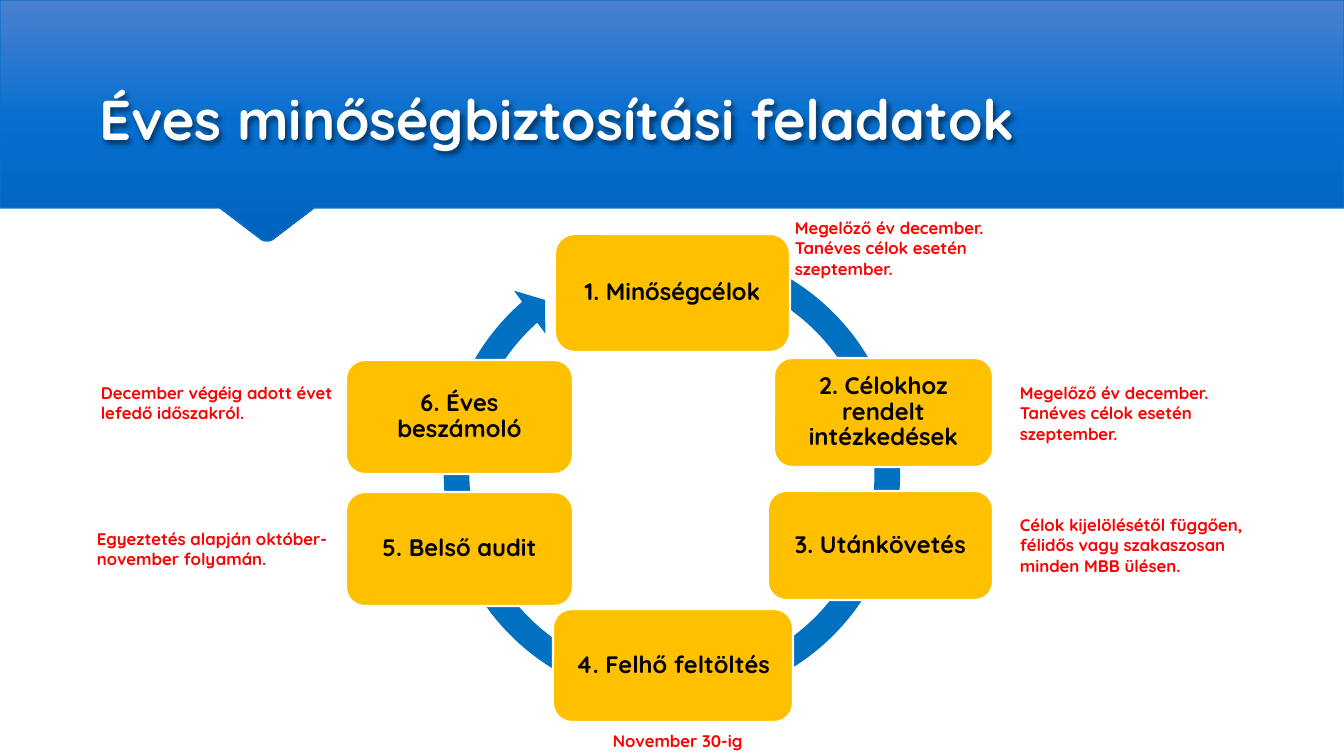
import copy
from dataclasses import dataclass

from pptx import Presentation
from pptx import util as u
from pptx.dml.color import RGBColor
from pptx.enum import shapes, text
from pptx.oxml import parse_xml
from pptx.oxml.ns import nsdecls, qn

PX = 12192000 / 1344


@dataclass(frozen=True)
class Theme:
    font: str = "Quicksand"
    title: str = "FEFEFE"
    banner: tuple = ((0, "4C80D0"), (0.5, "066FCF"), (1, "0063BD"))
    banner_edge: str = "0F6FC6"
    cycle: str = "0070C0"
    step: str = "FFC000"
    step_edge: str = "FFFFFF"
    step_text: str = "000000"
    note: str = "FF0000"
    title_size: int = 40
    step_size: int = 17
    note_size: int = 12


THEME = Theme()


def px(*lengths):
    return [u.Emu(round(length * PX)) for length in lengths]


def write(frame, words, size, color, **paragraph_format):
    """Fill a text frame with one bold paragraph."""
    frame.word_wrap = True
    paragraph = frame.paragraphs[0]
    for name, value in paragraph_format.items():
        setattr(paragraph, name, value)
    run = paragraph.add_run()
    run.text = words
    for name, value in {"name": THEME.font, "size": u.Pt(size), "bold": True}.items():
        setattr(run.font, name, value)
    run.font.color.rgb = RGBColor.from_string(color)


prs = Presentation()
prs.slide_width, prs.slide_height = px(1344, 756)
slide = prs.slides.add_slide(prs.slide_layouts[5])

# Banner with a rounded pointer, behind the title
outline = [(0, 0), (0, 208), (220, 208), (262, 240), (265, 241), (269, 241),
           (272, 240), (314, 208), (1344, 208)]
builder = slide.shapes.build_freeform(1344, 0, scale=PX)
builder.add_line_segments(outline, close=True)
banner = builder.convert_to_shape()
banner.shadow.inherit = False
banner.line.color.rgb = RGBColor.from_string(THEME.banner_edge)
banner.line.width = u.Pt(1)
banner.fill.gradient()
banner.fill.gradient_angle = 270
stop_list = banner._element.spPr.find(qn("a:gradFill")).find(qn("a:gsLst"))
stop_list.insert(1, copy.deepcopy(stop_list[0]))
for stop, (position, color) in zip(banner.fill.gradient_stops, THEME.banner):
    stop.position = position
    stop.color.rgb = RGBColor.from_string(color)
slide.shapes._spTree.insert(2, banner._element)

title = slide.shapes.title
title.left, title.top, title.width, title.height = px(89, 50, 1123, 107)
title.text_frame.vertical_anchor = text.MSO_ANCHOR.BOTTOM
write(title.text_frame, "Éves minőségbiztosítási feladatok",
      THEME.title_size, THEME.title, alignment=text.PP_ALIGN.LEFT)
title_shadow = parse_xml(
    f'<a:effectLst {nsdecls("a")}><a:outerShdw blurRad="38100" dist="25400" dir="3600000">'
    '<a:srgbClr val="000000"><a:alpha val="50000"/></a:srgbClr></a:outerShdw></a:effectLst>')
title._element.spPr.append(title_shadow)

# Ring arrow behind the steps
cycle = slide.shapes.add_shape(shapes.MSO_SHAPE.CIRCULAR_ARROW, *px(430, 232, 484, 484))
cycle.shadow.inherit = False
cycle.fill.solid()
cycle.fill.fore_color.rgb = RGBColor.from_string(THEME.cycle)
cycle.line.fill.background()
for index, value in enumerate((0.053, 3.126, 137.206, 174.308, 0.055)):
    cycle.adjustments[index] = value

# Step, its box, its deadline and the deadline's box
steps = [
    ("1. Minőségcélok", (555, 234, 235, 118),
     "Megelőző év december. Tanéves célok esetén szeptember.", (785, 213, 255, 71)),
    ("2. Célokhoz rendelt intézkedések", (774, 358, 219, 109),
     "Megelőző év december. Tanéves célok esetén szeptember.", (1010, 378, 255, 71)),
    ("3. Utánkövetés", (768, 491, 225, 109),
     "Célok kijelölésétől függően, félidős vagy szakaszosan minden MBB ülésen.",
     (1010, 510, 255, 71)),
    ("4. Felhő feltöltés", (553, 609, 240, 113),
     "November 30-ig", (603, 726, 255, 30)),
    ("5. Belső audit", (346, 492, 227, 114),
     "Egyeztetés alapján október-november folyamán.", (87, 524, 255, 50)),
    ("6. Éves beszámoló", (346, 360, 227, 114),
     "December végéig adott évet lefedő időszakról.", (91, 378, 255, 50)),
]
for step_words, step_box, note_words, note_box in steps:
    step = slide.shapes.add_shape(shapes.MSO_SHAPE.ROUNDED_RECTANGLE, *px(*step_box))
    step.shadow.inherit = False
    step.fill.solid()
    step.fill.fore_color.rgb = RGBColor.from_string(THEME.step)
    step.line.color.rgb = RGBColor.from_string(THEME.step_edge)
    step.line.width = u.Pt(1.5)
    step.text_frame.vertical_anchor = text.MSO_ANCHOR.MIDDLE
    for side in ("left", "top", "right", "bottom"):
        setattr(step.text_frame, f"margin_{side}", px(7)[0])
    write(step.text_frame, step_words, THEME.step_size, THEME.step_text,
          alignment=text.PP_ALIGN.CENTER, line_spacing=0.9)

    note = slide.shapes.add_textbox(*px(*note_box))
    note.text_frame.auto_size = text.MSO_AUTO_SIZE.SHAPE_TO_FIT_TEXT
    write(note.text_frame, note_words, THEME.note_size, THEME.note)

prs.save("out.pptx")
